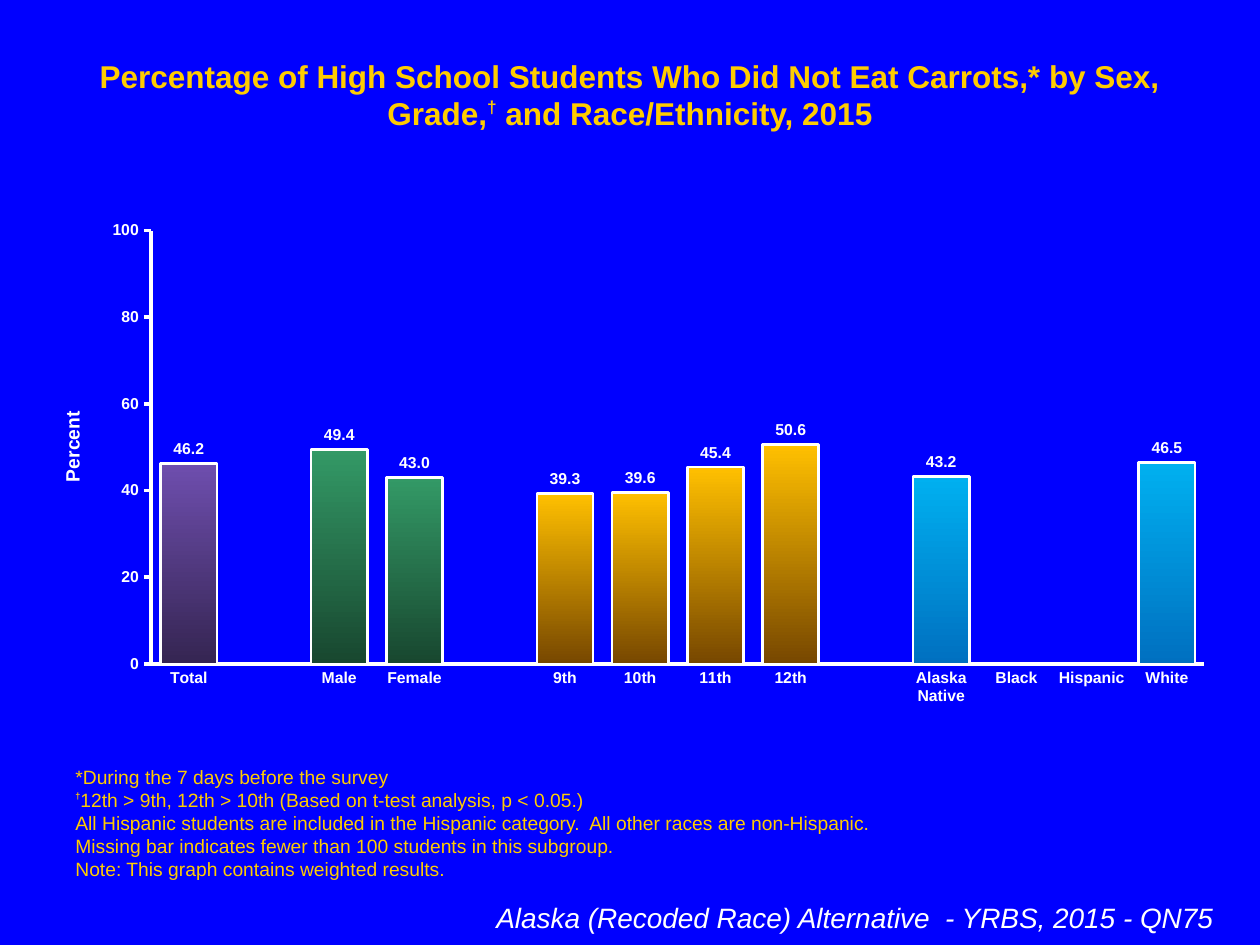
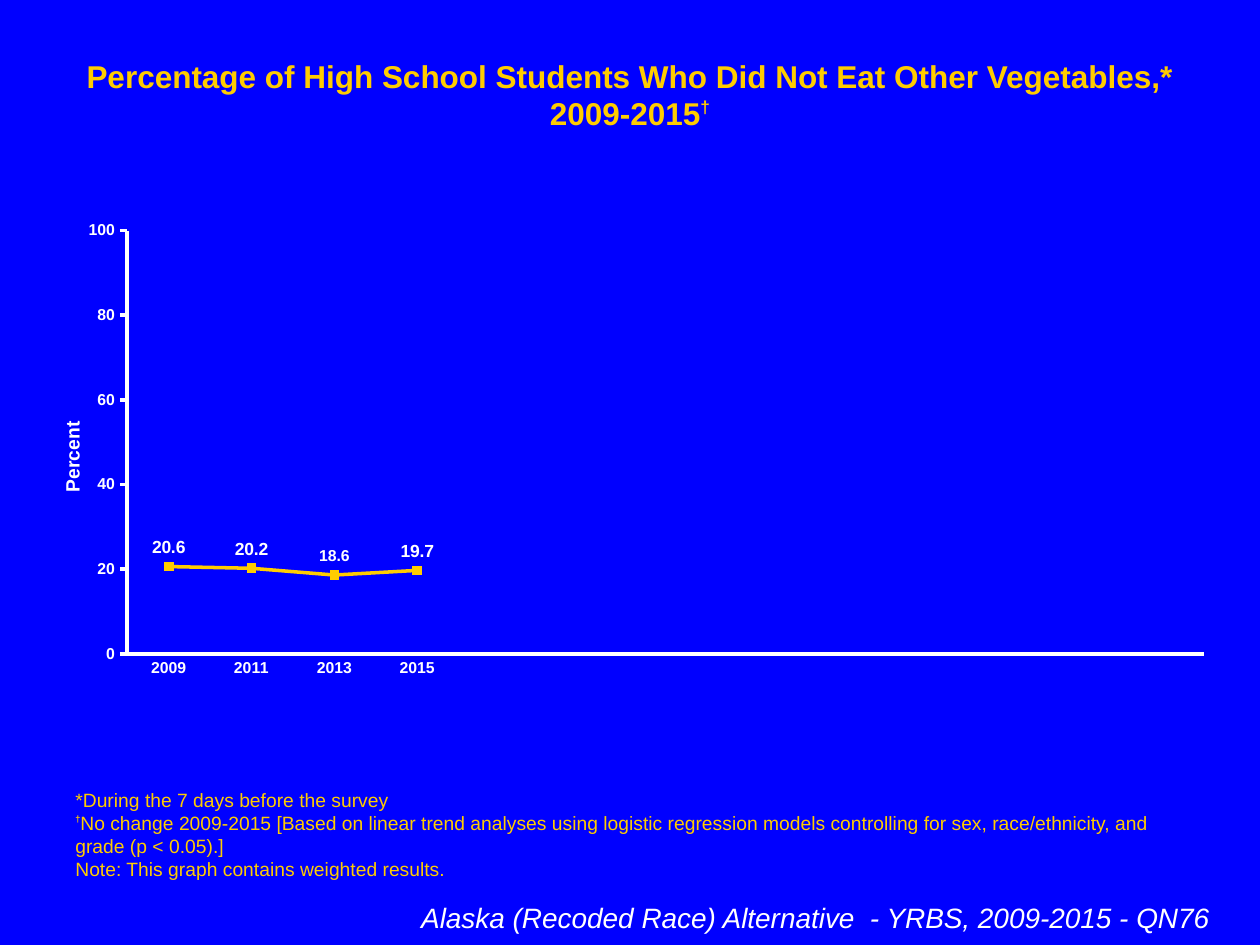
from lxml.etree import SubElement, Element
from pptx import Presentation
from pptx.chart.data import CategoryChartData as ChartData
from pptx.dml.color import RGBColor
from pptx.enum.chart import XL_CHART_TYPE as CT, XL_LABEL_POSITION as LP
from pptx.enum.chart import XL_MARKER_STYLE as MS, XL_TICK_MARK as TM
from pptx.enum.text import MSO_ANCHOR as ANCHOR, MSO_AUTO_SIZE as AUTO, PP_ALIGN as ALIGN
from pptx.oxml.ns import qn
from pptx.util import Pt

FONT = "Arial"
COLORS = {"back": "0000FF", "gold": "FFCC00", "white": "FFFFFF"}
# Top and bottom colour of each group of bars
GRADIENTS = {
    "total": ("6E4EAE", "352552"),
    "sex": ("339966", "18472F"),
    "grade": ("FFC000", "774700"),
    "race": ("00B0F0", "0070C0"),
}
# Boxes: left, top, width, height
TITLE_BOX = (36, 28.8, 648, 28.8)
NOTES_BOX = (36, 486, 648, 20.88)
CHART_BOX = (18, 120.24, 684, 288)

SURVEY_NOTE = ["*During the 7 days before the survey"]
WEIGHT_NOTE = ["Note: This graph contains weighted results."]


def rgb(name):
    return RGBColor.from_string(COLORS.get(name, name))


def style(font, size, color="white", bold=False, italic=False):
    font.name, font.size, font.bold, font.italic = FONT, Pt(size), bold, italic
    font.color.rgb = rgb(color)


# Text: each paragraph is a list of strings, "†" being set as a superscript
def add_text(s, box, paragraphs, size, color, align=ALIGN.LEFT, anchor=ANCHOR.TOP,
             bold=False, italic=False, dagger=(17, 40)):
    tf = s.shapes.add_textbox(*map(Pt, box)).text_frame
    tf.word_wrap, tf.auto_size, tf.vertical_anchor = True, AUTO.SHAPE_TO_FIT_TEXT, anchor
    for i, parts in enumerate(paragraphs):
        p = tf.paragraphs[0] if i == 0 else tf.add_paragraph()
        p.alignment = align
        for part in parts:
            r = p.add_run()
            r.text = part
            if part == "†":
                style(r.font, dagger[0], color, True)
                r.font._element.set("baseline", str(dagger[1] * 1000))
            else:
                style(r.font, size, color, bold, italic)


def add_frame(prs, title, notes, footer, footer_box):
    s = prs.slides.add_slide(prs.slide_layouts[6])
    s.background.fill.solid()
    s.background.fill.fore_color.rgb = rgb("back")
    add_text(s, TITLE_BOX, [title], 18, "gold", ALIGN.CENTER, bold=True)
    add_text(s, NOTES_BOX, notes, 11, "gold", anchor=ANCHOR.BOTTOM, dagger=(9, 50))
    add_text(s, footer_box, [[footer]], 16, "white", ALIGN.RIGHT, italic=True)
    return s


# Manual layout, in fractions of the chart
def set_layout(parent, index, x, y, w=None, h=None):
    for old in parent.findall(qn("c:layout")):
        parent.remove(old)
    layout = Element(qn("c:layout"))
    manual = SubElement(layout, qn("c:manualLayout"))
    values = [("xMode", "edge"), ("yMode", "edge"), ("x", x), ("y", y)]
    if w:
        values = [("layoutTarget", "inner")] + values + [("w", w), ("h", h)]
    for tag, value in values:
        SubElement(manual, qn(f"c:{tag}")).set("val", str(value))
    parent.insert(index, layout)


def add_percent_chart(s, box, kind, cats, values, plot_box, title_y, label_size):
    data = ChartData(number_format="0.0")
    data.categories = cats
    data.add_series("Series 1", values)
    chart = s.shapes.add_chart(kind, *map(Pt, box), data).chart
    chart.has_legend = chart.has_title = False
    style(chart.font, 18)
    set_layout(chart._chartSpace.chart.plotArea, 0, *plot_box)

    # Axes
    cat_axis, val_axis = chart.category_axis, chart.value_axis
    for axis in (cat_axis, val_axis):
        axis.has_major_gridlines = False
        axis.major_tick_mark = axis.minor_tick_mark = TM.NONE
        style(axis.tick_labels.font, 9, bold=True)
        axis.format.line.color.rgb = rgb("white")
        axis.format.line.width = Pt(2)
    val_axis.major_tick_mark = TM.OUTSIDE
    val_axis.minimum_scale, val_axis.maximum_scale, val_axis.major_unit = 0, 100, 20
    val_axis.tick_labels.number_format = "#,##0"
    val_axis.tick_labels.number_format_is_linked = False

    # Axis title
    tf = val_axis.axis_title.text_frame
    tf.text = "Percent"
    style(tf.paragraphs[0].runs[0].font, 11, bold=True)
    tf._txBody.bodyPr.set("rot", "-5400000")
    tf._txBody.bodyPr.set("vert", "horz")
    set_layout(val_axis.axis_title._element, 1, 0.02, title_y)

    # Data labels
    plot = chart.plots[0]
    plot.vary_by_categories = False
    labels = plot.series[0].data_labels
    labels.show_value = True
    labels.number_format, labels.number_format_is_linked = "#,##0.0", False
    style(labels.font, label_size, bold=True)
    return plot


def add_group_bars(s, box, groups):
    # An empty category separates one group from the next
    bars = []
    for name, members in groups.items():
        if bars:
            bars.append((None, "", None))
        bars += [(name, cat, value) for cat, value in members]
    plot = add_percent_chart(s, box, CT.COLUMN_CLUSTERED, [b[1] for b in bars],
                             [b[2] for b in bars], (0.1, 0.04, 0.88, 0.86), 0.39, 9)
    plot.gap_width, plot.overlap = 34, 100
    series = plot.series[0]
    series.data_labels.position = LP.OUTSIDE_END
    for i, (name, _, value) in enumerate(bars):
        if value is None:
            continue
        fmt = series.points[i].format
        fmt.fill.gradient()
        fmt.fill.gradient_angle = 270
        for stop, color in zip(fmt.fill.gradient_stops, GRADIENTS[name]):
            stop.color.rgb = rgb(color)
        fmt.line.color.rgb = rgb("white")
        fmt.line.width = Pt(1.5)


def add_trend_line(s, box, trend, slots):
    blank = slots - len(trend)
    plot = add_percent_chart(s, box, CT.LINE_MARKERS, list(trend) + [""] * blank,
                             list(trend.values()) + [None] * blank,
                             (0.08, 0.04, 0.9, 0.84), 0.41, 10)
    series = plot.series[0]
    series.smooth = False
    series.format.line.color.rgb = rgb("gold")
    series.format.line.width = Pt(2)
    series.data_labels.position = LP.ABOVE
    marker = series.marker
    marker.style, marker.size = MS.SQUARE, 5
    marker.format.fill.solid()
    marker.format.fill.fore_color.rgb = rgb("gold")
    marker.format.line.color.rgb = rgb("gold")
    # The label of 2013 is smaller
    label = series.points[2].data_label
    style(label.font, 9, bold=True)
    label.position = LP.ABOVE


def add_carrots_slide(prs):
    s = add_frame(
        prs,
        ["Percentage of High School Students Who Did Not Eat Carrots,* by Sex, Grade,",
         "†", " and Race/Ethnicity, 2015"],
        [SURVEY_NOTE,
         ["†", "12th > 9th, 12th > 10th (Based on t-test analysis, p < 0.05.)"],
         ["All Hispanic students are included in the Hispanic category.  "
          "All other races are non-Hispanic."],
         ["Missing bar indicates fewer than 100 students in this subgroup."],
         WEIGHT_NOTE],
        "Alaska (Recoded Race) Alternative  - YRBS, 2015 - QN75",
        (66.24, 511.2, 634.32, 26.64))
    add_group_bars(s, CHART_BOX, {
        "total": [("Total", 46.2)],
        "sex": [("Male", 49.4), ("Female", 43.0)],
        "grade": [("9th", 39.3), ("10th", 39.6), ("11th", 45.4), ("12th", 50.6)],
        "race": [("Alaska Native", 43.2), ("Black", None), ("Hispanic", None),
                 ("White", 46.5)],
    })


def add_vegetables_slide(prs):
    s = add_frame(
        prs,
        ["Percentage of High School Students Who Did Not Eat Other Vegetables,* 2009-2015",
         "†"],
        [SURVEY_NOTE,
         ["†", "No change 2009-2015 [Based on linear trend analyses using logistic "
          "regression models controlling for sex, race/ethnicity, and grade (p < 0.05).]"],
         WEIGHT_NOTE],
        "Alaska (Recoded Race) Alternative  - YRBS, 2009-2015 - QN76",
        (138.24, 511.2, 560.16, 26.64))
    trend = {"2009": 20.6, "2011": 20.2, "2013": 18.6, "2015": 19.7}
    add_trend_line(s, CHART_BOX, trend, slots=13)


def main():
    prs = Presentation()
    prs.slide_width, prs.slide_height = Pt(720), Pt(540)
    add_carrots_slide(prs)
    add_vegetables_slide(prs)
    prs.save("out.pptx")


if __name__ == "__main__":
    main()
